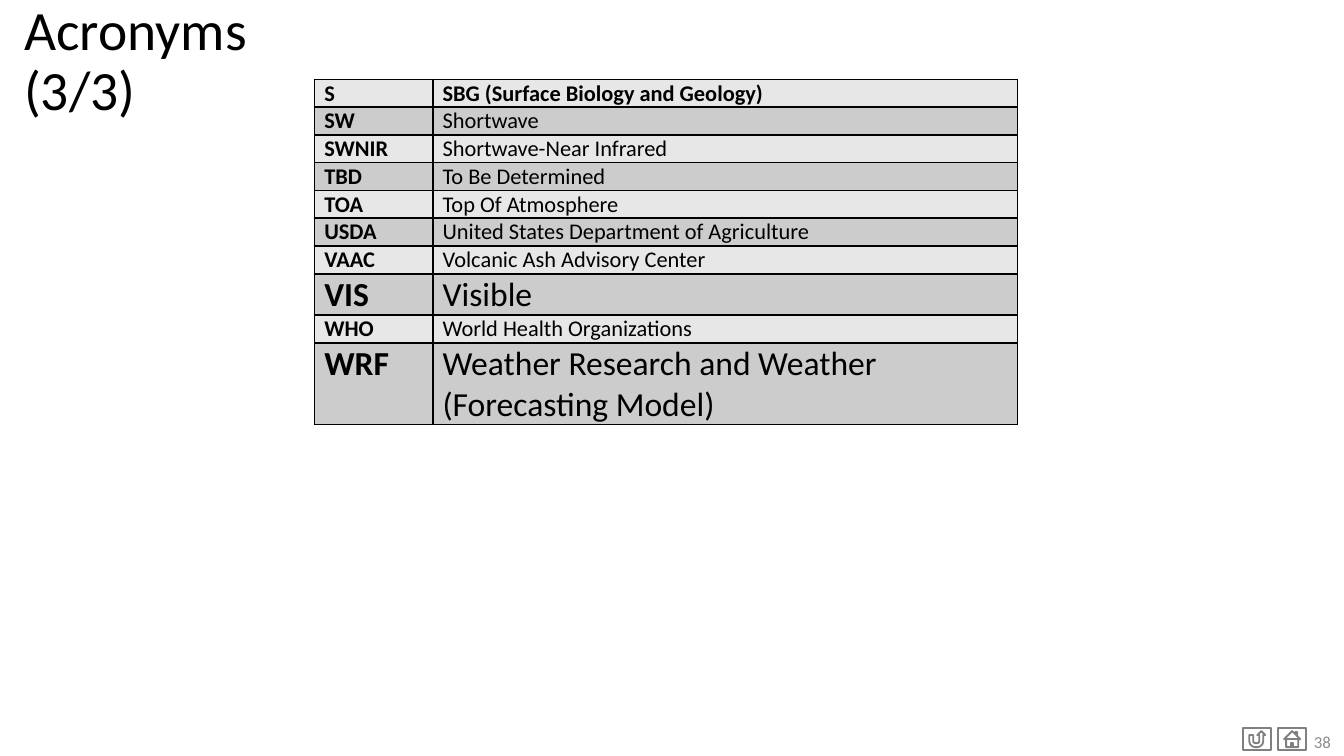
from lxml import etree
from pptx import Presentation
from pptx import util as u
from pptx.dml.color import RGBColor
from pptx.enum import shapes, text
from pptx.oxml.ns import qn

FONT = "Calibri"
COLORS = {"text": "000000", "border": "000000", "light": "E7E7E7",
          "dark": "CCCCCC", "button": "808080", "number": "8C8C8C"}
# Acronym, meaning, text size
ACRONYMS = [
    ("S", "SBG (Surface Biology and Geology)", 12),
    ("SW", "Shortwave", 12),
    ("SWNIR", "Shortwave-Near Infrared", 12),
    ("TBD", "To Be Determined", 12),
    ("TOA", "Top Of Atmosphere", 12),
    ("USDA", "United States Department of Agriculture", 12),
    ("VAAC", "Volcanic Ash Advisory Center", 12),
    ("VIS", "Visible", 18),
    ("WHO", "World Health Organizations", 12),
    ("WRF", "Weather Research and Weather (Forecasting Model)", 18),
]


def rgb(name):
    return RGBColor.from_string(COLORS[name])


def box(*lengths):
    return [u.Inches(v) for v in lengths]


def add_run(p, content, size, color="text", bold=False):
    r = p.add_run()
    r.text = content
    r.font.name = FONT
    r.font.size = u.Pt(size)
    r.font.bold = bold
    r.font.color.rgb = rgb(color)


def add_title(s, lines):
    sp = s.shapes.title
    sp.left, sp.top, sp.width, sp.height = box(0.08, -0.08, 8.62, 1.09)
    tf = sp.text_frame
    tf.auto_size = text.MSO_AUTO_SIZE.NONE
    tf.vertical_anchor = text.MSO_ANCHOR.MIDDLE
    p = tf.paragraphs[0]
    p.alignment = text.PP_ALIGN.LEFT
    p.line_spacing = 0.9
    for i, line in enumerate(lines):
        if i:
            p.add_line_break()
        add_run(p, line, 29.7)


def add_button(s, kind, left):
    sp = s.shapes.add_shape(kind, *box(left, 5.42, 0.21, 0.16))
    sp.shadow.inherit = False
    sp.fill.background()
    sp.line.color.rgb = rgb("button")
    sp.line.width = u.Pt(1)


def add_page_number(s, number):
    tf = s.shapes.add_textbox(*box(7.75, 5.37, 2.25, 0.3)).text_frame
    tf.word_wrap = True
    tf.vertical_anchor = text.MSO_ANCHOR.MIDDLE
    p = tf.paragraphs[0]
    p.alignment = text.PP_ALIGN.RIGHT
    add_run(p, number, 9, "number")


def add_borders(cell):
    tc_pr = cell._tc.get_or_add_tcPr()
    for i, side in enumerate(("lnL", "lnR", "lnT", "lnB")):
        ln = etree.Element(qn(f"a:{side}"), w=str(u.Pt(1)))
        fill = etree.SubElement(ln, qn("a:solidFill"))
        etree.SubElement(fill, qn("a:srgbClr"), val=COLORS["border"])
        tc_pr.insert(i, ln)  # borders come before the fill


def fill_cell(cell, content, size, bold, fill):
    cell.margin_left = cell.margin_right = u.Pt(5.25)
    cell.margin_top = cell.margin_bottom = u.Pt(0.25)
    cell.fill.solid()
    cell.fill.fore_color.rgb = rgb(fill)
    add_borders(cell)
    add_run(cell.text_frame.paragraphs[0], content, size, bold=bold)


def add_acronym_table(s):
    frame = s.shapes.add_table(len(ACRONYMS), 2, *box(2.34, 0.59, 5.23, 2.07))
    table = frame.table
    for column, width in zip(table.columns, (0.88, 4.35)):
        column.width = u.Inches(width)
    for i, (acronym, meaning, size) in enumerate(ACRONYMS):
        table.rows[i].height = u.Inches(0.2)
        fill = "dark" if i % 2 else "light"
        fill_cell(table.cell(i, 0), acronym, size, True, fill)
        fill_cell(table.cell(i, 1), meaning, size, i == 0, fill)


def main():
    prs = Presentation()
    prs.slide_width = u.Inches(10)
    prs.slide_height = prs.slide_width * 9 // 16
    s = prs.slides.add_slide(prs.slide_layouts[5])

    # Navigation buttons
    add_button(s, shapes.MSO_SHAPE.ACTION_BUTTON_HOME, 9.51)
    add_button(s, shapes.MSO_SHAPE.ACTION_BUTTON_RETURN, 9.25)

    # Title, page number and acronyms
    add_title(s, ["Acronyms ", "(3/3)"])
    add_page_number(s, "38")
    add_acronym_table(s)

    prs.save("out.pptx")


if __name__ == "__main__":
    main()
